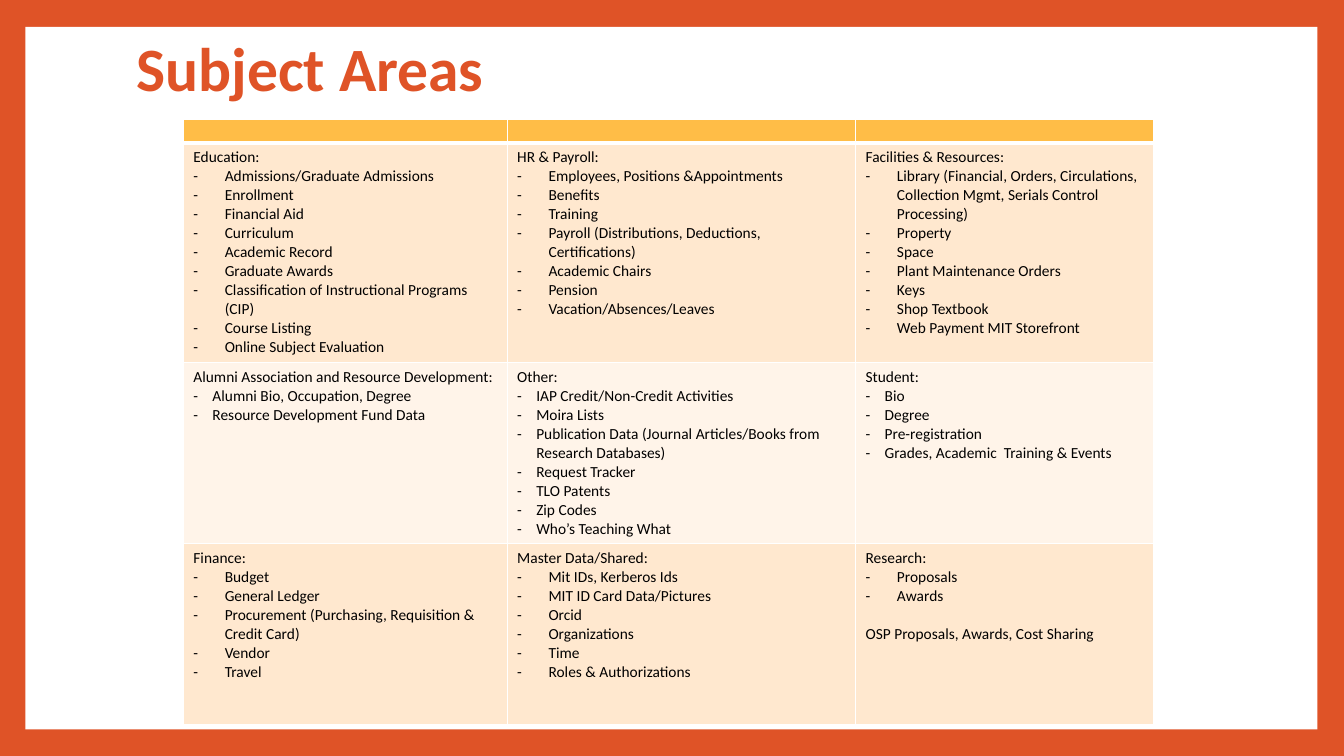
from lxml.etree import SubElement
from pptx import Presentation
from pptx.dml.color import RGBColor
from pptx.enum.shapes import MSO_SHAPE
from pptx.enum.text import MSO_ANCHOR, MSO_AUTO_SIZE, PP_ALIGN
from pptx.oxml.ns import qn
from pptx.util import Cm, Pt

COLORS = {
    "orange": "DF5327",
    "white": "FFFFFF",
    "black": "000000",
    "header": "FFBD47",
    "band_dark": "FFE8CF",
    "band_light": "FFF4E9",
}
FONT = "Calibri"
COLUMN_WIDTHS = [8.16, 8.78, 7.52]
ROW_HEIGHTS = [0.6, 5.53, 4.57, 4.57]
ROW_FILLS = ["header", "band_dark", "band_light", "band_dark"]
ROW_INDENTS = [0, 0.79, 0.48, 0.79]

SUBJECT_AREAS = [
    [
        ("Education:", ["Admissions/Graduate Admissions", "Enrollment", "Financial Aid",
                        "Curriculum", "Academic Record", "Graduate Awards",
                        "Classification of Instructional Programs (CIP)",
                        "Course Listing", "Online Subject Evaluation"]),
        ("HR & Payroll:", ["Employees, Positions &Appointments", "Benefits", "Training",
                           "Payroll (Distributions, Deductions, Certifications)",
                           "Academic Chairs", "Pension", "Vacation/Absences/Leaves"]),
        ("Facilities & Resources:", ["Library (Financial, Orders, Circulations, "
                                     "Collection Mgmt, Serials Control Processing)",
                                     "Property", "Space", "Plant Maintenance Orders",
                                     "Keys", "Shop Textbook", "Web Payment MIT Storefront"]),
    ],
    [
        ("Alumni Association and Resource Development:",
         ["Alumni Bio, Occupation, Degree", "Resource Development Fund Data"]),
        ("Other:", ["IAP Credit/Non-Credit Activities", "Moira Lists",
                    "Publication Data (Journal Articles/Books from Research Databases)",
                    "Request Tracker", "TLO Patents", "Zip Codes", "Who’s Teaching What"]),
        ("Student:", ["Bio", "Degree", "Pre-registration",
                      "Grades, Academic  Training & Events"]),
    ],
    [
        ("Finance:", ["Budget", "General Ledger",
                      "Procurement (Purchasing, Requisition & Credit Card)",
                      "Vendor", "Travel"]),
        ("Master Data/Shared:", ["Mit IDs, Kerberos Ids", "MIT ID Card Data/Pictures",
                                 "Orcid", "Organizations", "Time",
                                 "Roles & Authorizations"]),
        ("Research:", ["Proposals", "Awards"]),
    ],
]
RESEARCH_NOTE = "OSP Proposals, Awards, Cost Sharing"


def style_cell(cell, fill, top, bottom):
    properties = cell._tc.get_or_add_tcPr()
    for side, width in (("L", 1), ("R", 1), ("T", top), ("B", bottom)):
        border = SubElement(properties, qn(f"a:ln{side}"), w=str(Pt(width)))
        border_fill = SubElement(border, qn("a:solidFill"))
        SubElement(border_fill, qn("a:srgbClr"), val=COLORS["white"])
    cell.fill.solid()
    cell.fill.fore_color.rgb = RGBColor.from_string(COLORS[fill])


def write_paragraph(paragraph, text, indent=0):
    paragraph.text = text
    if indent:
        properties = paragraph._p.get_or_add_pPr()
        properties.set("marL", str(Cm(indent)))
        properties.set("indent", str(-Cm(indent)))
        SubElement(properties, qn("a:buFont"), typeface=FONT)
        SubElement(properties, qn("a:buChar"), char="-")
    font = paragraph.runs[0].font
    font.name = FONT
    font.size = Pt(11)
    font.color.rgb = RGBColor.from_string(COLORS["black"])


presentation = Presentation()
presentation.slide_width = Cm(33.87)
presentation.slide_height = Cm(19.05)
slide = presentation.slides.add_slide(presentation.slide_layouts[5])
slide.background.fill.solid()
slide.background.fill.fore_color.rgb = RGBColor.from_string(COLORS["orange"])

title = slide.shapes.title
title.left, title.top, title.width, title.height = Cm(3.18), Cm(0.61), Cm(27.43), Cm(2.39)
title_frame = title.text_frame
title_frame.text = "Subject Areas"
title_frame.auto_size = MSO_AUTO_SIZE.NONE
title_frame.vertical_anchor = MSO_ANCHOR.MIDDLE
title_paragraph = title_frame.paragraphs[0]
title_paragraph.alignment = PP_ALIGN.LEFT
title_paragraph.line_spacing = 0.9
title_font = title_paragraph.runs[0].font
title_font.name = FONT
title_font.size = Pt(44)
title_font.bold = True
title_font.color.rgb = RGBColor.from_string(COLORS["orange"])

panel = slide.shapes.add_shape(MSO_SHAPE.RECTANGLE, Cm(0.64), Cm(0.68), Cm(32.56), Cm(17.7))
panel.shadow.inherit = False
panel.fill.solid()
panel.fill.fore_color.rgb = RGBColor.from_string(COLORS["white"])
panel.line.fill.background()
title._element.addprevious(panel._element)

table = slide.shapes.add_table(
    len(ROW_HEIGHTS), len(COLUMN_WIDTHS), Cm(4.62), Cm(3),
    Cm(sum(COLUMN_WIDTHS)), Cm(sum(ROW_HEIGHTS))).table
for column, width in zip(table.columns, COLUMN_WIDTHS):
    column.width = Cm(width)
for row, height in zip(table.rows, ROW_HEIGHTS):
    row.height = Cm(height)

for header_cell in table.rows[0].cells:
    style_cell(header_cell, ROW_FILLS[0], 1, 3)
    header_cell.margin_top = header_cell.margin_bottom = 0
    SubElement(header_cell.text_frame.paragraphs[0]._p, qn("a:endParaRPr"), sz="800")

for row_index, areas in enumerate(SUBJECT_AREAS, start=1):
    for column_index, (heading, items) in enumerate(areas):
        cell = table.cell(row_index, column_index)
        style_cell(cell, ROW_FILLS[row_index], 3 if row_index == 1 else 1, 1)
        write_paragraph(cell.text_frame.paragraphs[0], heading)
        for item in items:
            write_paragraph(cell.text_frame.add_paragraph(), item, ROW_INDENTS[row_index])

note = table.cell(3, 2).text_frame.add_paragraph()
write_paragraph(note, RESEARCH_NOTE)
note.space_before = Pt(13.5)

presentation.save("out.pptx")
